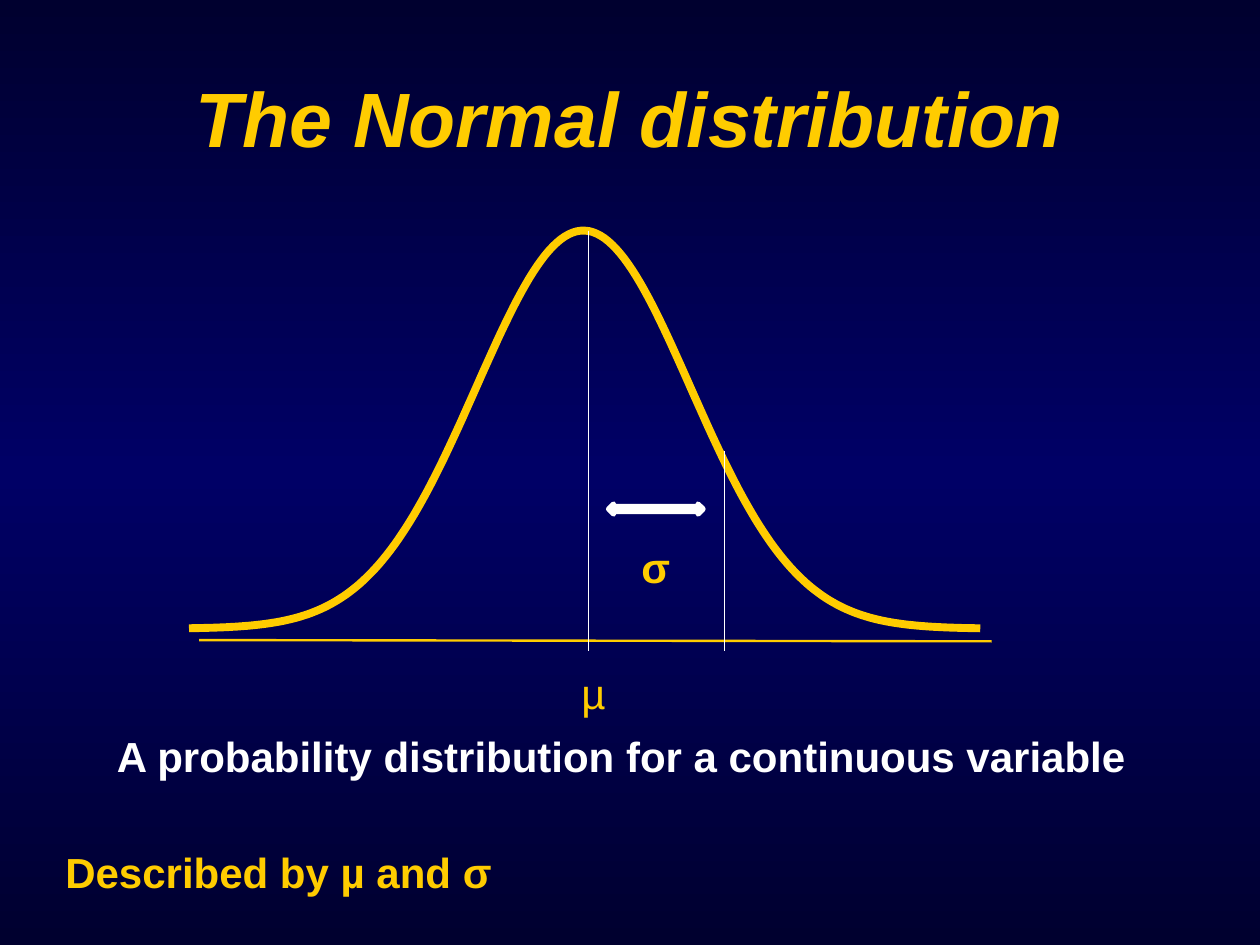
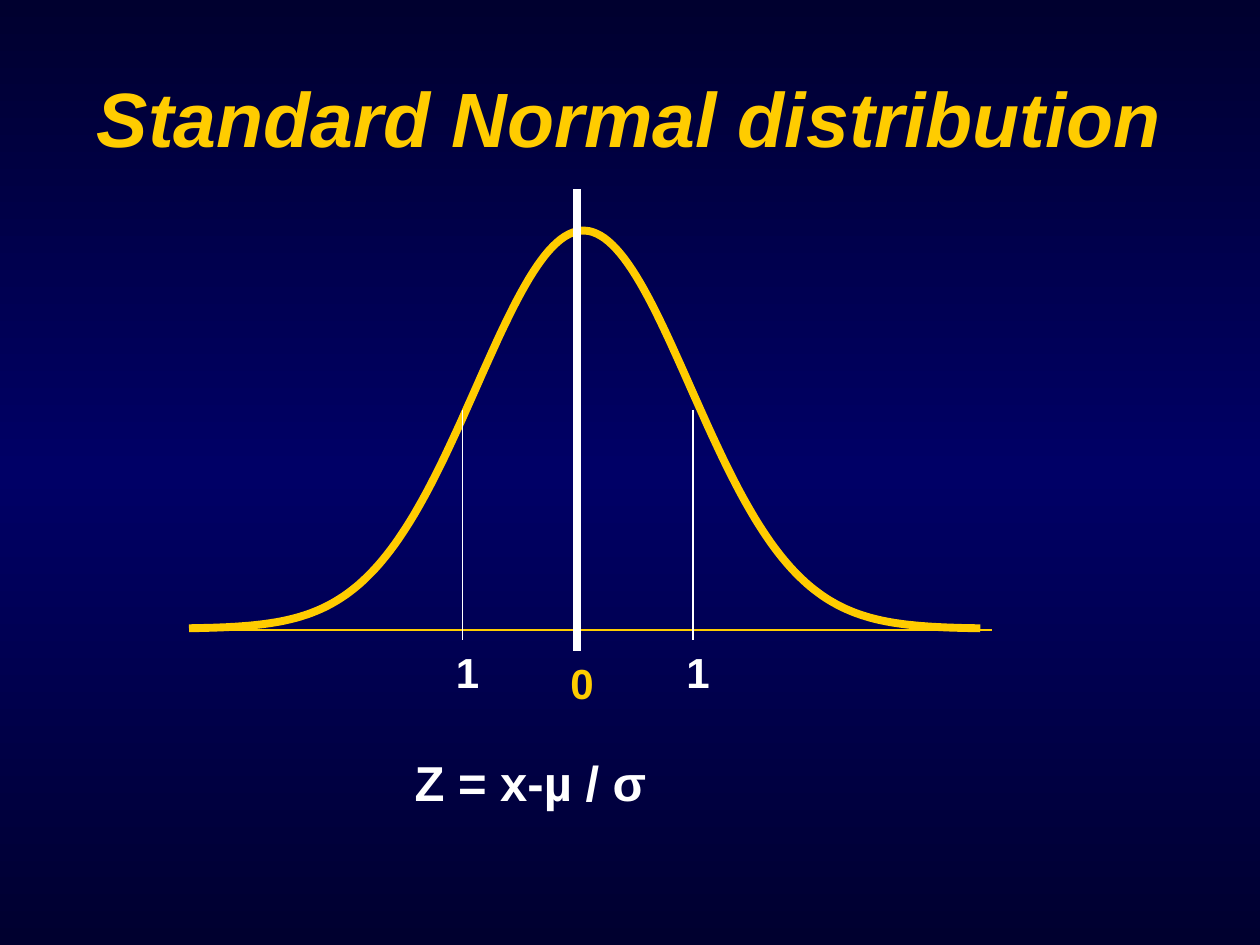
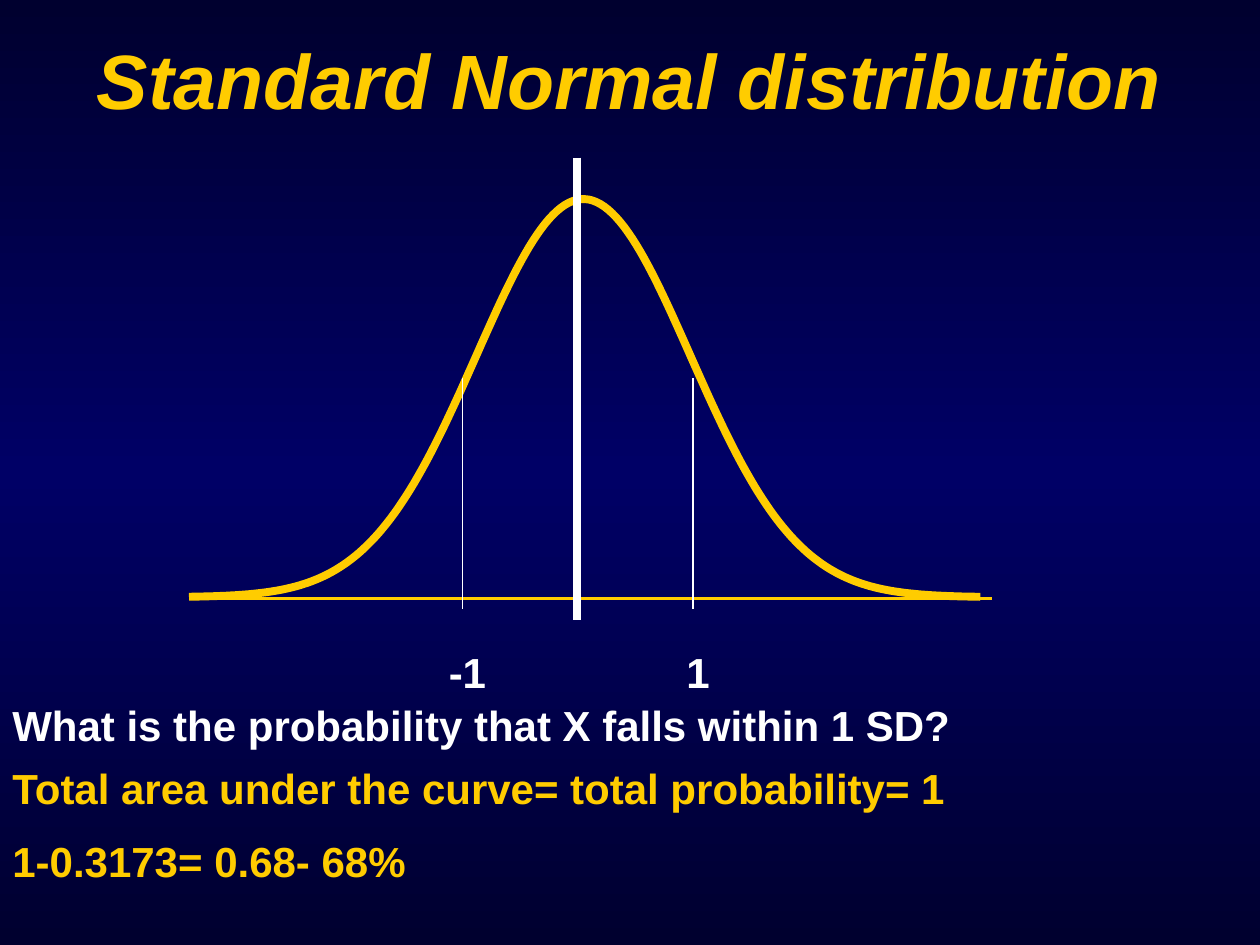
import copy
import math

import pptx
import pptx.dml.color
import pptx.enum.shapes
import pptx.enum.text
import pptx.oxml
import pptx.oxml.ns
import pptx.util

Inches = pptx.util.Inches
Pt = pptx.util.Pt
RGBColor = pptx.dml.color.RGBColor
ALIGN = pptx.enum.text.PP_ALIGN
ANCHOR = pptx.enum.text.MSO_ANCHOR

NAVY = RGBColor(0x00, 0x00, 0x2F)
BLUE = RGBColor(0x00, 0x00, 0x66)
GOLD = RGBColor(0xFF, 0xCC, 0x00)
WHITE = RGBColor(0xFF, 0xFF, 0xFF)
PALE = RGBColor(0xBB, 0xE0, 0xE3)
FONT = "Arial"

CURVE_LEFT, CURVE_RIGHT, CURVE_STEPS = 1.5, 7.78, 200
CURVE_MEAN, CURVE_SD, CURVE_HEIGHT = 4.63, 0.85, 3.16
LABEL_WIDTH, LABEL_TOP = 1.08, 5.08
CENTRE, LEFT_SD, RIGHT_SD = 4.58, 3.67, 5.5


class Deck:
    def __init__(self):
        self.prs = pptx.Presentation()
        self.prs.slide_width = Inches(10)
        self.prs.slide_height = Inches(7.5)
        self.s = None
        self.paint_background()

    def paint_background(self):
        master = self.prs.slide_master
        fill = master.background.fill
        fill.gradient()
        fill.gradient_angle = 270
        stops = master.element.find(".//" + pptx.oxml.ns.qn("a:gsLst"))
        stops.append(copy.deepcopy(stops[0]))
        for stop, position, color in zip(fill.gradient_stops, (0, 0.5, 1), (NAVY, BLUE, NAVY)):
            stop.position = position
            stop.color.rgb = color

    def new_slide(self):
        self.s = self.prs.slides.add_slide(self.prs.slide_layouts[6])

    def text(self, text, left, top, width, height=0.5, color=GOLD, size=24,
             bold=True, italic=False, align=ALIGN.LEFT, anchor=ANCHOR.TOP):
        sp = self.s.shapes.add_textbox(Inches(left), Inches(top), Inches(width), Inches(height))
        tf = sp.text_frame
        tf.word_wrap = True
        tf.vertical_anchor = anchor
        tf.text = text
        p = tf.paragraphs[0]
        p.alignment = align
        font = p.runs[0].font
        font.name, font.size = FONT, Pt(size)
        font.bold, font.italic = bold, italic
        font.color.rgb = color

    def title(self, text, top=0.3):
        self.text(text, 0.5, top, 9, 1.25, size=44, italic=True,
                  align=ALIGN.CENTER, anchor=ANCHOR.MIDDLE)

    def label(self, text, left, top=LABEL_TOP, width=LABEL_WIDTH, **style):
        self.text(text, left, top, width, align=ALIGN.CENTER, **style)

    def line(self, x1, y1, x2, y2, color=WHITE, width=0.75):
        c = self.s.shapes.add_connector(pptx.enum.shapes.MSO_CONNECTOR.STRAIGHT,
                                        Inches(x1), Inches(y1), Inches(x2), Inches(y2))
        c.line.color.rgb = color
        c.line.width = Pt(width)
        c.element.spPr.append(pptx.oxml.parse_xml(
            "<a:effectLst %s/>" % pptx.oxml.ns.nsdecls("a")))

    def axis(self, y1, y2):
        self.line(1.58, y1, 7.87, y2, GOLD, 1.37)

    def bell(self, foot):
        step = (CURVE_RIGHT - CURVE_LEFT) / CURVE_STEPS
        points = []
        for i in range(CURVE_STEPS + 1):
            x = CURVE_LEFT + i * step
            z = (x - CURVE_MEAN) / CURVE_SD
            y = foot - CURVE_HEIGHT * math.exp(-z * z / 2)
            points.append((Inches(x), Inches(y)))
        builder = self.s.shapes.build_freeform(*points[0])
        builder.add_line_segments(points[1:], close=False)
        sp = builder.convert_to_shape()
        sp.shadow.inherit = False
        sp.fill.background()
        sp.line.color.rgb = GOLD
        sp.line.width = Pt(4.5)

    def standard_bell(self, axis):
        self.axis(axis, axis)
        self.bell(axis - 0.01)
        self.line(CENTRE, axis - 3.5, CENTRE, axis + 0.17, width=4.5)
        for x in (LEFT_SD, RIGHT_SD):
            self.line(x, axis - 1.75, x, axis + 0.08)

    def sd_labels(self, left, right):
        for text, x in ((left, LEFT_SD), (right, RIGHT_SD)):
            self.label(text, x - 0.5, color=WHITE)

    def double_arrow(self, left, top, width, height):
        sp = self.s.shapes.add_shape(pptx.enum.shapes.MSO_SHAPE.LEFT_RIGHT_ARROW,
                                     Inches(left), Inches(top), Inches(width), Inches(height))
        sp.shadow.inherit = False
        sp.fill.solid()
        sp.fill.fore_color.rgb = PALE
        sp.line.color.rgb = WHITE
        sp.line.width = Pt(3)


def normal_slide(deck):
    deck.new_slide()
    deck.title("The Normal distribution")
    deck.axis(5.08, 5.09)
    deck.bell(4.99)
    deck.text("A probability distribution for a continuous variable", 0.83, 5.75, 8.33, color=WHITE)
    deck.text("Described by µ and σ", 0.42, 6.67, 9)
    deck.line(4.67, 1.83, 4.67, 5.17)
    deck.label("µ", 4.17, 5.25, bold=False)
    deck.line(5.75, 3.58, 5.75, 5.17)
    deck.double_arrow(4.83, 4, 0.75, 0.08)
    deck.label("σ", 4.83, 4.25, 0.75)


def standard_slide(deck):
    deck.new_slide()
    deck.title("Standard Normal distribution")
    deck.standard_bell(5)
    deck.label("0", CENTRE - 0.5, 5.17)
    deck.sd_labels("1", "1")
    deck.label("Z = x-µ / σ", 1, 5.92, 6.42, color=WHITE, size=28)


def probability_slide(deck):
    deck.new_slide()
    deck.text("What is the probability that X falls within 1 SD?", 0, 5.5, 9.17, color=WHITE)
    deck.text("Total area under the curve= total probability= 1", 0, 6, 9.67)
    deck.standard_bell(4.75)
    deck.sd_labels("-1", "1")
    deck.title("Standard Normal distribution", 0)
    deck.text("1-0.3173= 0.68- 68%", 0, 6.58, 9.17)


def main():
    deck = Deck()
    normal_slide(deck)
    standard_slide(deck)
    probability_slide(deck)
    deck.prs.save("out.pptx")


if __name__ == "__main__":
    main()
